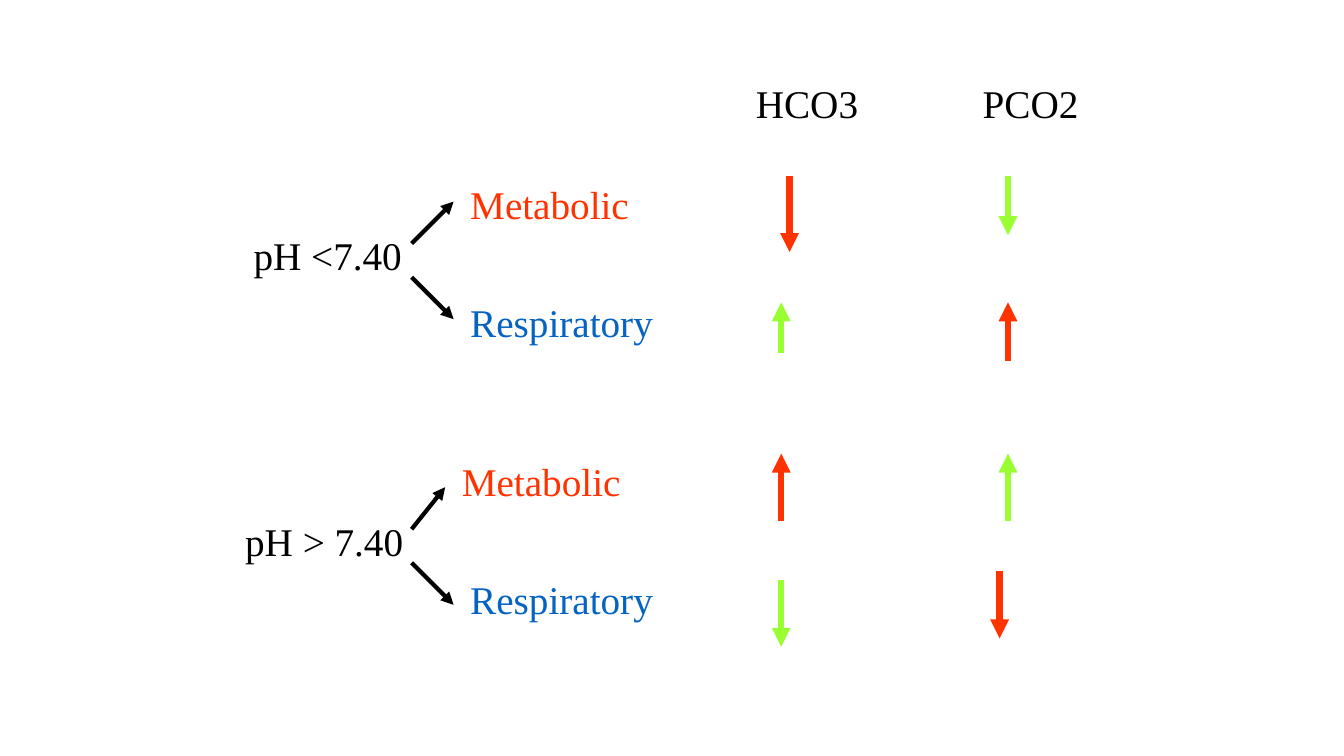
"""Build a slide on acid-base disorders, set on a grid of 160 by 90 cells."""
from lxml import etree
from pptx import Presentation
from pptx import util as u
from pptx.dml.color import RGBColor
from pptx.enum import shapes, text
from pptx.oxml import ns

COLS, ROWS = 160, 90
BLACK, RED, BLUE, GREEN = "000000", "FF3300", "0563C1", "99FF33"
FONT = {"name": "Times New Roman", "size": u.Pt(28)}
FRAME = {"word_wrap": False, "auto_size": text.MSO_AUTO_SIZE.SHAPE_TO_FIT_TEXT}
HIGH = 6.8

HEADS = [("HCO3", 88.8, 14.7), ("PCO2", 115.8, 13.9)]
KINDS = [("Metabolic", RED, 21.5), ("Respiratory", BLUE, 24.5)]
FORK = 49
STARTS = (2, 6)
# label, column, width, row, lift of branch names, branch tips
GROUPS = [
    ("pH <7.40", 29, 20.4, 27, 3.1, [(54, 24), (54, 38)]),
    ("pH > 7.40", 28, 21.6, 61, 4.1, [(53, 58), (54, 72)]),
]
# column, start row, end row, colour
TRENDS = [
    (94, 21, 30, RED), (120, 21, 28, GREEN),
    (93, 42, 36, GREEN), (120, 43, 36, RED),
    (93, 62, 54, RED), (120, 62, 54, GREEN),
    (93, 69, 77, GREEN), (119, 68, 76, RED),
]

deck = Presentation()
deck.slide_width, deck.slide_height = u.Inches(13.33), u.Inches(7.5)
slide = deck.slides.add_slide(deck.slide_layouts[6])


def tint(code):
    """Turn a hex string into a colour."""
    return RGBColor.from_string(code)


def across(col):
    """Give the length of a number of columns."""
    return round(deck.slide_width * col / COLS)


def down(row):
    """Give the length of a number of rows."""
    return round(deck.slide_height * row / ROWS)


def label(words, col, row, wide, code=BLACK):
    """Add one line of text."""
    box = slide.shapes.add_textbox(across(col), down(row), across(wide), down(HIGH))
    for key, value in FRAME.items():
        setattr(box.text_frame, key, value)
    run = box.text_frame.paragraphs[0].add_run()
    run.text = words
    for key, value in FONT.items():
        setattr(run.font, key, value)
    run.font.color.rgb = tint(code)


def arrow(start, end, code, width):
    """Add a straight arrow between two grid points."""
    (left, top), (right, low) = start, end
    link = slide.shapes.add_connector(
        shapes.MSO_CONNECTOR.STRAIGHT, across(left), down(top), across(right), down(low))
    link.line.color.rgb = tint(code)
    link.line.width = u.Pt(width)
    etree.SubElement(link.line._get_or_add_ln(), ns.qn("a:tailEnd"), type="triangle")
    etree.SubElement(link._element.spPr, ns.qn("a:effectLst"))


for words, col, wide in HEADS:
    label(words, col, 8.9, wide)

for words, col, wide, row, lift, tips in GROUPS:
    label(words, col, row, wide)
    for step, (kind, code, size), tip in zip(STARTS, KINDS, tips):
        arrow((FORK, row + step), tip, BLACK, 3)
        label(kind, tip[0] + 0.8, tip[1] - lift, size, code)

for col, start, end, code in TRENDS:
    arrow((col, start), (col, end), code, 4.5)

deck.save("out.pptx")
